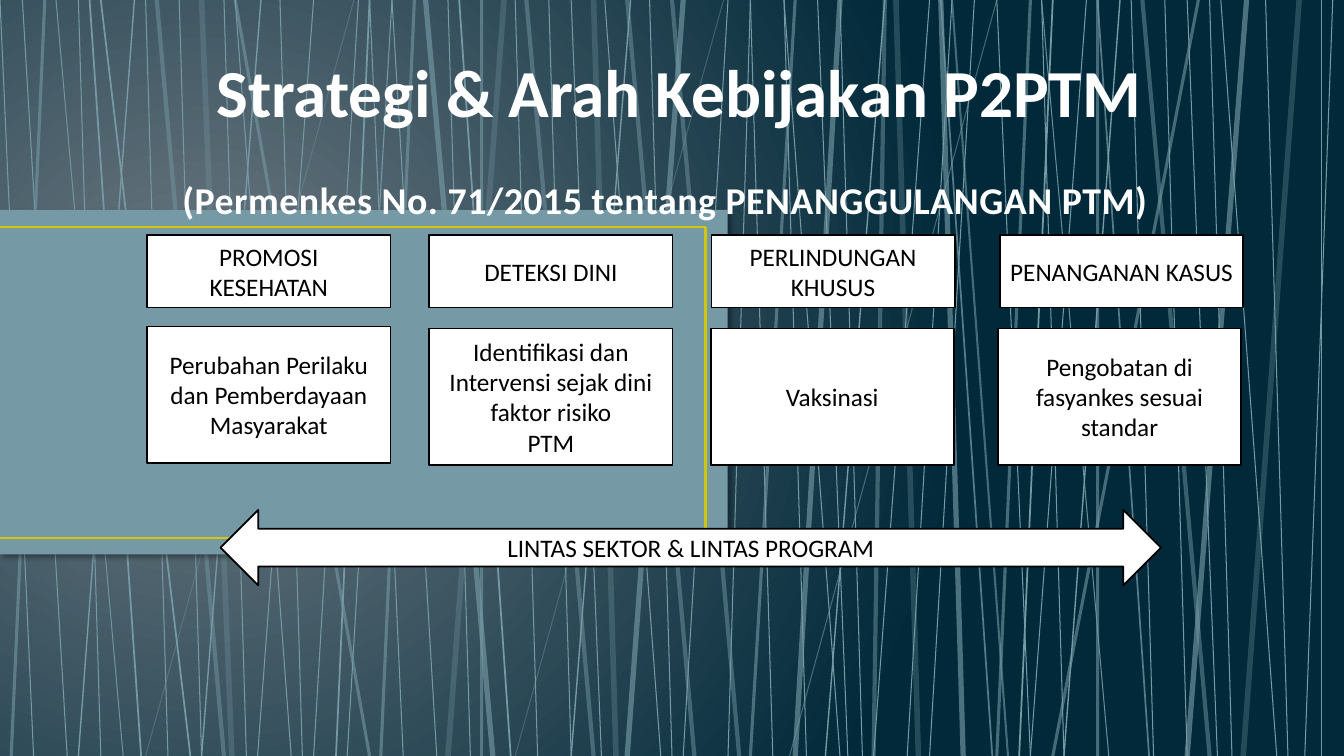
from dataclasses import dataclass

from lxml import etree
from pptx import Presentation
from pptx.dml.color import RGBColor
from pptx.enum import shapes, text
from pptx.oxml import parse_xml
from pptx.oxml.ns import nsdecls, qn
from pptx.util import Cm, Pt


@dataclass(frozen=True)
class Theme:
    font: str = "Calibri"
    glow: str = "717C84"
    night: str = "01293A"
    strand: str = "759AA5"
    frame: str = "CFC60D"
    white: str = "FFFFFF"
    subtitle: str = "FEFEFE"
    black: str = "000000"
    heading_size: float = 48
    subtitle_size: float = 27
    body_size: float = 18


THEME = Theme()
WIDTH, HEIGHT = 33.87, 19.05
GRID = WIDTH / 120

# (width in points, opacity in percent): top and bottom of each strand, in grid steps
STRANDS = {
    (0.75, 100): [
        (25, 27), (21, 26), (28, 23), (0, 3), (2, 6), (20, 22), (7, 9), (32, 28),
        (35, 31), (13, 15), (16, 18), (58, 60), (54, 59), (33, 36), (35, 39), (40, 42),
        (65, 61), (67, 65), (51, 53.7), (46, 48), (49, 51), (70, 75), (83, 78), (75, 77),
        (87, 83), (85, 81), (73, 75.7), (67, 69), (70, 72), (89, 92), (93, 95),
        (101, 103), (104, 106), (113, 115), (109, 114), (108, 110), (119, 116.5),
        (106, 108.7), (97, 92),
    ],
    (0.75, 90): [(5, 11), (93, 99)],
    (0.75, 56): [(89, 70.5)],
    (0.75, 39): [(31.6, 13), (64.6, 46)],
    (1, 100): [(12, 7), (23.3, 18), (56.3, 51), (79, 73.7), (100, 95)],
    (1.25, 100): [(9, 17), (8, 12.6), (33, 30), (41, 45.6), (94, 91), (118, 118)],
    (1.25, 72): [(98, 102.6), (84, 88.6)],
    (1.5, 58): [(85, 90)],
    (2.25, 58): [(4, 1), (21, 33), (37, 34), (43, 43), (71, 67), (92, 89), (98, 98), (107, 94)],
    (3, 47): [(14, 20), (47, 53), (56, 62), (102, 108), (79, 78), (60, 66)],
    (3.75, 63): [(61, 56), (38, 44), (111.3, 106), (84, 86), (75, 71)],
    (4, 30): [(18, 20.7), (45, 40), (53, 55), (80, 82), (116, 111)],
}

# text, left, top, height
BOXES = [
    ("PROMOSI KESEHATAN", 3.71, 5.92, 1.83),
    ("DETEKSI DINI", 10.82, 5.92, 1.83),
    ("PERLINDUNGAN KHUSUS", 17.93, 5.92, 1.83),
    ("PENANGANAN KASUS", 25.2, 5.92, 1.83),
    ("Perubahan Perilaku dan Pemberdayaan Masyarakat", 3.71, 8.23, 3.43),
    ("Identifikasi dan Intervensi sejak dini faktor risiko\nPTM", 10.82, 8.28, 3.43),
    ("Vaksinasi", 17.91, 8.28, 3.43),
    ("Pengobatan di fasyankes sesuai standar", 25.15, 8.28, 3.43),
]
BOX_WIDTH = 6.13


def add_line(start, end, color, width, opacity=100):
    line = slide.shapes.add_connector(
        shapes.MSO_CONNECTOR.STRAIGHT, *(Cm(value) for value in (*start, *end)))
    line.line.color.rgb = RGBColor.from_string(color)
    line.line.width = Pt(width)
    properties = line.element.spPr
    if opacity < 100:
        fill_color = properties.find(".//" + qn("a:srgbClr"))
        etree.SubElement(fill_color, qn("a:alpha"), val=str(opacity * 1000))
    etree.SubElement(properties, qn("a:effectLst"))


def write(shape, content, size=THEME.body_size, color=THEME.black, bold=False,
          align=text.PP_ALIGN.CENTER, anchor=text.MSO_ANCHOR.MIDDLE, line_spacing=1.0, tracking=0):
    frame = shape.text_frame
    frame.word_wrap = True
    frame.auto_size = text.MSO_AUTO_SIZE.NONE
    frame.vertical_anchor = anchor
    frame.text = content
    for paragraph in frame.paragraphs:
        paragraph.alignment = align
        paragraph.line_spacing = line_spacing
        for run in paragraph.runs:
            run.font.name = THEME.font
            run.font.size = Pt(size)
            run.font.bold = bold
            run.font.color.rgb = RGBColor.from_string(color)
            if tracking:
                run.font._element.set("spc", str(round(tracking * 100)))


presentation = Presentation()
presentation.slide_width, presentation.slide_height = Cm(WIDTH), Cm(HEIGHT)
slide = presentation.slides.add_slide(presentation.slide_layouts[5])

# Background: glow fading outwards
background = slide.background.fill
background.gradient()
gradient = slide.element.find(".//" + qn("a:gradFill"))
gradient.getparent().replace(gradient, parse_xml(
    f'<a:gradFill {nsdecls("a")} rotWithShape="1"><a:gsLst>'
    f'<a:gs pos="0"><a:srgbClr val="{THEME.glow}"/></a:gs>'
    f'<a:gs pos="100000"><a:srgbClr val="{THEME.night}"/></a:gs></a:gsLst>'
    '<a:path path="circle"><a:fillToRect l="15000" t="50000" r="85000" b="60000"/></a:path>'
    '</a:gradFill>'))

for (width, opacity), strands in STRANDS.items():
    for top, bottom in strands:
        add_line((top * GRID, 0), (bottom * GRID, HEIGHT), THEME.strand, width, opacity)

# Panel with its frame
panel = slide.shapes.add_shape(
    shapes.MSO_SHAPE.RECTANGLE, Cm(0), Cm(5.29), Cm(18.34), Cm(8.68))
panel.fill.solid()
panel.fill.fore_color.rgb = RGBColor.from_string(THEME.strand)
panel.line.fill.background()
panel.element.spPr.append(parse_xml(
    f'<a:effectLst {nsdecls("a")}>'
    '<a:outerShdw blurRad="50800" dist="38100" dir="2700000" algn="tl" rotWithShape="0">'
    f'<a:srgbClr val="{THEME.black}"><a:alpha val="40000"/></a:srgbClr>'
    '</a:outerShdw></a:effectLst>'))
frame_corners = [(0, 5.72), (17.78, 5.72), (17.78, 13.55), (0, 13.55)]
for start, end in zip(frame_corners, frame_corners[1:]):
    add_line(start, end, THEME.frame, 1.5)

# Heading and title
heading = slide.shapes.add_textbox(Cm(0.18), Cm(0.86), Cm(WIDTH), Cm(3.12))
write(heading, "Strategi & Arah Kebijakan P2PTM", size=THEME.heading_size,
      color=THEME.white, bold=True, line_spacing=0.9)

title = slide.shapes.title
title.left, title.top, title.width, title.height = Cm(4.34), Cm(3.38), Cm(26.82), Cm(2.34)
write(title, "(Permenkes No. 71/2015 tentang PENANGGULANGAN PTM)", size=THEME.subtitle_size,
      color=THEME.subtitle, bold=True, align=text.PP_ALIGN.LEFT,
      anchor=text.MSO_ANCHOR.BOTTOM, tracking=0.4)
heading.element.addnext(title.element)

# Strategy boxes and the arrow below them
blocks = [(shapes.MSO_SHAPE.RECTANGLE, label, left, top, BOX_WIDTH, height)
          for label, left, top, height in BOXES]
blocks.append((shapes.MSO_SHAPE.LEFT_RIGHT_ARROW, "LINTAS SEKTOR & LINTAS PROGRAM",
               5.56, 12.85, 23.7, 1.9))
for kind, label, left, top, width, height in blocks:
    block = slide.shapes.add_shape(kind, Cm(left), Cm(top), Cm(width), Cm(height))
    block.shadow.inherit = False
    block.fill.solid()
    block.fill.fore_color.rgb = RGBColor.from_string(THEME.white)
    block.line.color.rgb = RGBColor.from_string(THEME.black)
    block.line.width = Pt(1.25)
    write(block, label)

presentation.save("out.pptx")
